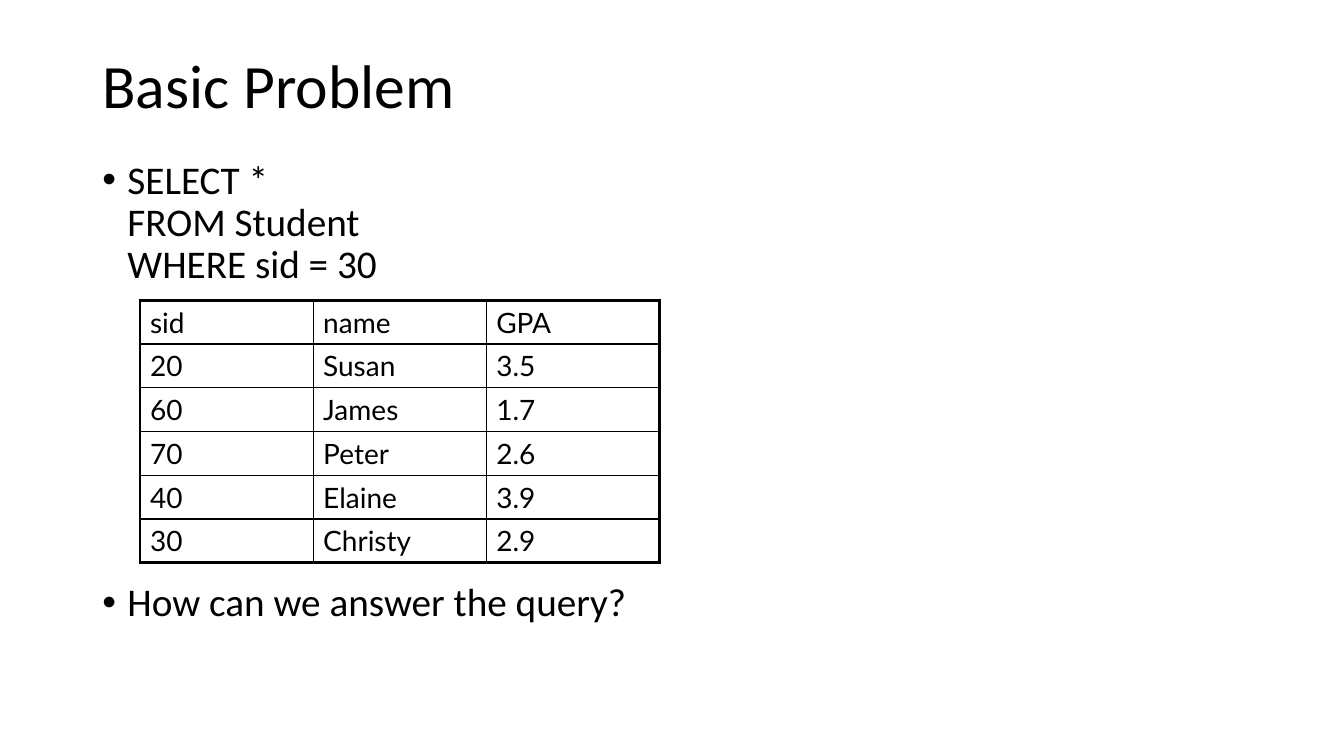
import pptx
import pptx.dml.color
import pptx.enum.text
import pptx.oxml
import pptx.oxml.ns
import pptx.util
from lxml import etree

Pt = pptx.util.Pt
COLORS = {"text": "000000", "border": "000000"}
TITLE_FONT = {"name": "Calibri", "size": Pt(44), "bold": False}
BODY_FONT = {"name": "Calibri", "size": Pt(28)}
TABLE_FONT = {"name": "Lato", "size": Pt(20), "bold": False}
STUDENTS = [
    ("sid", "name", "GPA"),
    ("20", "Susan", "3.5"),
    ("60", "James", "1.7"),
    ("70", "Peter", "2.6"),
    ("40", "Elaine", "3.9"),
    ("30", "Christy", "2.9"),
]
BULLETS = [
    ("SELECT *\vFROM Student\vWHERE sid = 30", 0),
    ("How can we answer the query?", 211),
]


def set_attributes(target, values):
    for name, value in values.items():
        setattr(target, name, value)


def write(paragraph, text, font):
    paragraph.text = text
    for run in paragraph.runs:
        set_attributes(run.font, font)
        run.font.color.rgb = pptx.dml.color.RGBColor.from_string(COLORS["text"])


def place_title(slide, left, top, width, height):
    title = slide.shapes.title
    set_attributes(title, {"left": Pt(left), "top": Pt(top), "width": Pt(width), "height": Pt(height)})
    title.text_frame.vertical_anchor = pptx.enum.text.MSO_ANCHOR.MIDDLE
    paragraph = title.text_frame.paragraphs[0]
    write(paragraph, "Basic Problem", TITLE_FONT)
    set_attributes(paragraph, {"alignment": pptx.enum.text.PP_ALIGN.LEFT, "line_spacing": 0.9})


def add_bullets(slide, left, top, width, height):
    frame = slide.shapes.add_textbox(Pt(left), Pt(top), Pt(width), Pt(height)).text_frame
    frame.word_wrap = True
    for index, (text, gap) in enumerate(BULLETS):
        paragraph = frame.add_paragraph() if index else frame.paragraphs[0]
        write(paragraph, text, BODY_FONT)
        set_attributes(paragraph, {"line_spacing": 0.9, "space_before": Pt(gap)})
        properties = paragraph._p.get_or_add_pPr()
        properties.set("marL", str(Pt(18)))
        properties.set("indent", str(-Pt(18)))
        namespace = pptx.oxml.ns.qn
        etree.SubElement(properties, namespace("a:buFont")).set("typeface", "Arial")
        etree.SubElement(properties, namespace("a:buChar")).set("char", "•")


def add_borders(cell, widths):
    properties = cell._tc.get_or_add_tcPr()
    for side, width in widths.items():
        line = etree.SubElement(properties, pptx.oxml.ns.qn(f"a:ln{side}"), w=str(Pt(width)))
        fill = etree.SubElement(line, pptx.oxml.ns.qn("a:solidFill"))
        etree.SubElement(fill, pptx.oxml.ns.qn("a:srgbClr"), val=COLORS["border"])


def add_student_table(slide, left, top, width, height):
    last_row, last_column = len(STUDENTS) - 1, len(STUDENTS[0]) - 1
    table = slide.shapes.add_table(
        last_row + 1, last_column + 1, Pt(left), Pt(top), Pt(width), Pt(height)
    ).table
    set_attributes(table, {"first_row": False, "horz_banding": False})
    for row, values in enumerate(STUDENTS):
        for column, value in enumerate(values):
            cell = table.cell(row, column)
            outer = {"L": column == 0, "R": column == last_column, "T": row == 0, "B": row == last_row}
            add_borders(cell, {side: 2.25 if edge else 1 for side, edge in outer.items()})
            cell.fill.background()
            write(cell.text_frame.paragraphs[0], value, TABLE_FONT)


def build_slide(presentation):
    slide = presentation.slides.add_slide(presentation.slide_layouts[5])
    place_title(slide, 66, 24, 828, 78)
    add_bullets(slide, 66, 111, 828, 376)
    add_student_table(slide, 100, 214.5, 371, 187.2)


def main():
    presentation = pptx.Presentation()
    set_attributes(presentation, {"slide_width": Pt(960), "slide_height": Pt(540)})
    build_slide(presentation)
    presentation.save("out.pptx")


if __name__ == "__main__":
    main()
